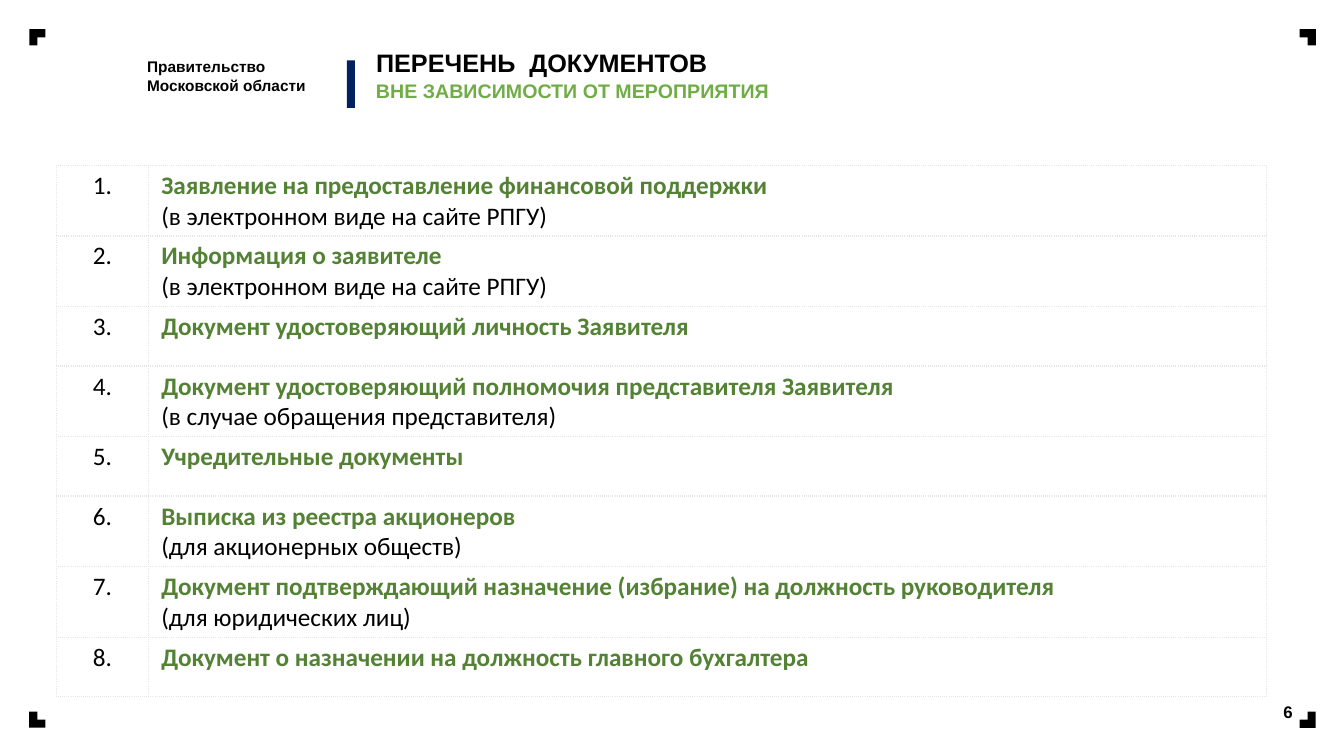
from lxml.etree import SubElement
from pptx import Presentation
from pptx.dml.color import RGBColor
from pptx.enum.shapes import MSO_SHAPE as Shape
from pptx.enum.text import MSO_ANCHOR as Anchor, MSO_AUTO_SIZE as AutoSize, PP_ALIGN as Align
from pptx.oxml.ns import qn
from pptx.util import Inches, Pt

BLACK = RGBColor(0x00, 0x00, 0x00)
NAVY = RGBColor(0x00, 0x20, 0x60)
LIGHT_GREEN = RGBColor(0x70, 0xAD, 0x47)
DARK_GREEN = RGBColor(0x54, 0x82, 0x35)
BORDER_GREY = RGBColor(0xE7, 0xE6, 0xE6)

DOCUMENTS = [
    ("Заявление на предоставление финансовой поддержки", "(в электронном виде на сайте РПГУ)"),
    ("Информация о заявителе", "(в электронном виде на сайте РПГУ)"),
    ("Документ удостоверяющий личность Заявителя", None),
    ("Документ удостоверяющий полномочия представителя Заявителя",
     "(в случае обращения представителя)"),
    ("Учредительные документы", None),
    ("Выписка из реестра акционеров", "(для акционерных обществ)"),
    ("Документ подтверждающий назначение (избрание) на должность руководителя",
     "(для юридических лиц)"),
    ("Документ о назначении на должность главного бухгалтера", None),
]


def write(para, text, size, font="Arial", color=BLACK, bold=True, align=Align.LEFT, spacing=None):
    span = para.add_run()
    span.text = text
    span.font.name = font
    span.font.size = Pt(size)
    span.font.bold = bold
    span.font.color.rgb = color
    para.alignment = align
    if spacing:
        para.line_spacing = spacing


def add_text_frame(page, left, top, width, height):
    box = page.shapes.add_textbox(Inches(left), Inches(top), Inches(width), Inches(height))
    box.text_frame.word_wrap = True
    return box.text_frame


def add_solid(page, kind, color, left, top, width, height, rotation=0):
    shape = page.shapes.add_shape(kind, Inches(left), Inches(top), Inches(width), Inches(height))
    shape.shadow.inherit = False
    shape.fill.solid()
    shape.fill.fore_color.rgb = color
    shape.line.fill.background()
    shape.rotation = rotation


def add_corner_marks(page, left, top, right, bottom, size=0.16):
    places = [(left, bottom), (left, top), (right, top), (right, bottom)]
    for turn, (x, y) in enumerate(places):
        add_solid(page, Shape.CORNER, BLACK, x, y, size, size, rotation=90 * turn)


def add_header(page, left, top):
    issuer = add_text_frame(page, left, top + 0.07, 1.81, 0.47)
    write(issuer.paragraphs[0], "Правительство", 11)
    write(issuer.add_paragraph(), "Московской области", 11)
    add_solid(page, Shape.RECTANGLE, NAVY, left + 2.08, top + 0.15, 0.08, 0.47)

    title = page.shapes.title
    title.left, title.top = Inches(left + 2.27), Inches(top)
    title.width, title.height = Inches(9.51), Inches(0.47)
    frame = title.text_frame
    frame.auto_size = AutoSize.NONE
    frame.vertical_anchor = Anchor.TOP
    write(frame.paragraphs[0], "ПЕРЕЧЕНЬ  ДОКУМЕНТОВ", 18, spacing=0.9)

    subtitle = add_text_frame(page, left + 2.27, top + 0.31, 8.45, 0.31)
    write(subtitle.paragraphs[0], "ВНЕ ЗАВИСИМОСТИ ОТ МЕРОПРИЯТИЯ", 14,
          color=LIGHT_GREEN, spacing=0.9)


def style_cell(cell):
    """Give the cell its margins, dotted borders and no fill."""
    cell.margin_left = cell.margin_right = Inches(0.13)
    cell.margin_top = cell.margin_bottom = Inches(0.05)
    properties = cell._tc.get_or_add_tcPr()
    for side in ("a:lnL", "a:lnR", "a:lnT", "a:lnB"):
        line = SubElement(properties, qn(side), w=str(Pt(1)))
        fill = SubElement(line, qn("a:solidFill"))
        SubElement(fill, qn("a:srgbClr"), val=str(BORDER_GREY))
        SubElement(line, qn("a:prstDash"), val="sysDot")
    cell.fill.background()


def add_document_table(page, left, top, number_width, text_width):
    heights = [0.7 if note else 0.59 for _, note in DOCUMENTS]
    table = page.shapes.add_table(
        len(DOCUMENTS), 2, Inches(left), Inches(top),
        Inches(number_width + text_width), Inches(sum(heights))).table
    table.first_row = table.horz_banding = False
    table.columns[0].width = Inches(number_width)
    table.columns[1].width = Inches(text_width)
    for index, (name, note) in enumerate(DOCUMENTS):
        table.rows[index].height = Inches(heights[index])
        number_cell, text_cell = table.cell(index, 0), table.cell(index, 1)
        style_cell(number_cell)
        style_cell(text_cell)
        write(number_cell.text_frame.paragraphs[0], f"{index + 1}.", 18,
              font="Calibri", bold=False, align=Align.CENTER)
        write(text_cell.text_frame.paragraphs[0], name, 18, font="Calibri", color=DARK_GREEN)
        if note:
            write(text_cell.text_frame.add_paragraph(), note, 18, font="Calibri", bold=False)


def add_page_number(page, left, top):
    frame = add_text_frame(page, left, top, 0.55, 0.34)
    frame.vertical_anchor = Anchor.MIDDLE
    write(frame.paragraphs[0], "6", 12, align=Align.CENTER)


def main():
    deck = Presentation()
    deck.slide_width, deck.slide_height = Inches(13.33), Inches(7.5)
    page = deck.slides.add_slide(deck.slide_layouts[5])
    add_corner_marks(page, left=0.29, top=0.29, right=12.89, bottom=7.06)
    add_header(page, left=1.36, top=0.45)
    add_page_number(page, left=12.5, top=6.89)
    add_document_table(page, left=0.56, top=1.64, number_width=0.91, text_width=11.09)
    deck.save("out.pptx")


if __name__ == "__main__":
    main()
